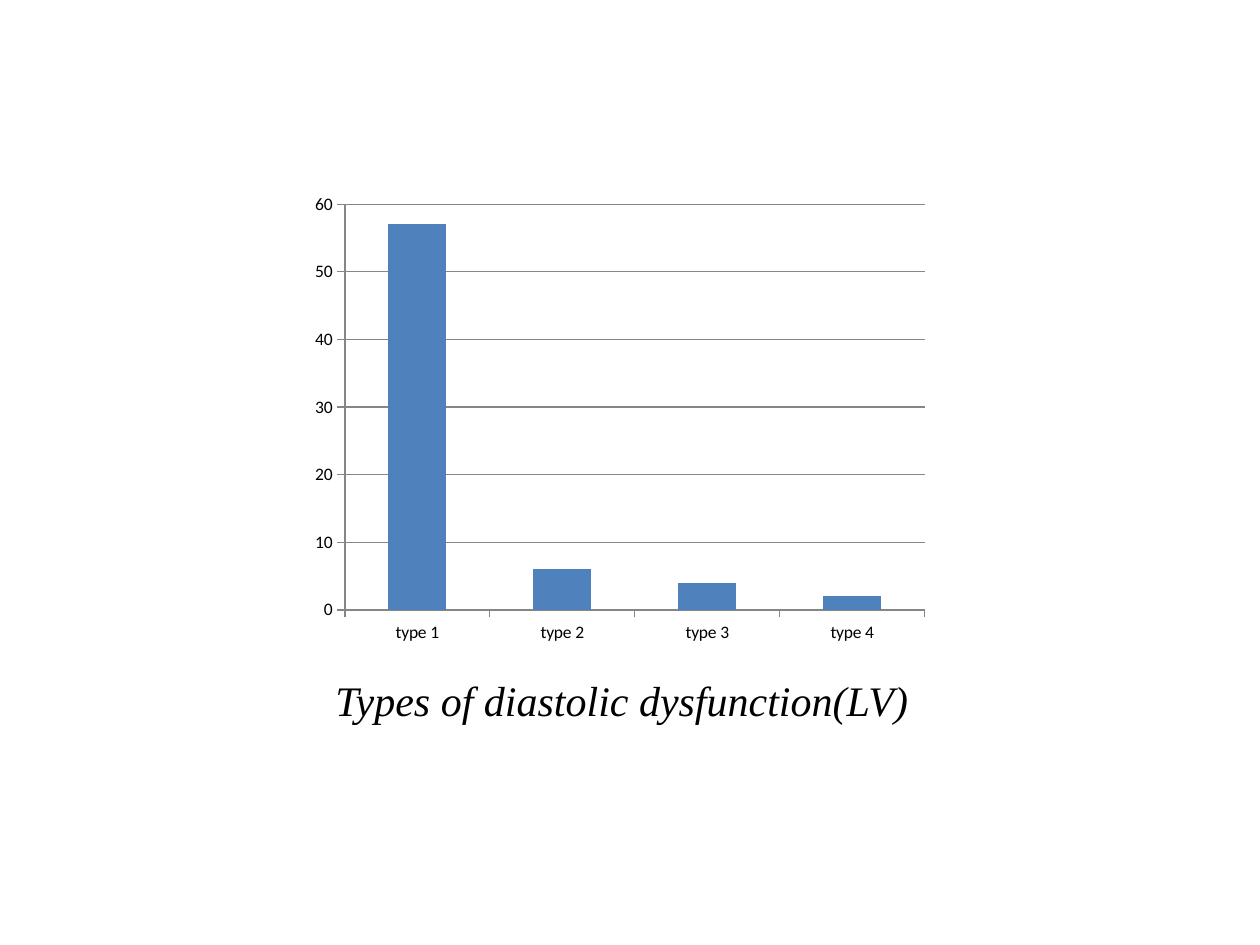
from pptx import Presentation
from pptx.chart.data import CategoryChartData
from pptx.dml.color import RGBColor
from pptx.enum.chart import XL_CHART_TYPE, XL_TICK_MARK
from pptx.enum.text import MSO_ANCHOR, PP_ALIGN
from pptx.util import Pt

COLOURS = {"text": "000000", "bar": "4F81BD", "line": "868686"}
DYSFUNCTION_TYPES = {"type 1": 57, "type 2": 6, "type 3": 4, "type 4": 2}


def colour(name):
    return RGBColor.from_string(COLOURS[name])


def set_format(target, values):
    for name, value in values.items():
        setattr(target, name, value)


def set_line(line):
    line.color.rgb = colour("line")
    line.width = Pt(0.75)


def add_caption(page, text):
    title = page.shapes.title
    set_format(title, {"left": Pt(178.5), "top": Pt(381.6),
                       "width": Pt(395.3), "height": Pt(36)})
    set_format(title.text_frame, {
        "word_wrap": True, "vertical_anchor": MSO_ANCHOR.MIDDLE,
        "margin_left": Pt(13.2), "margin_right": Pt(7.2),
        "margin_top": Pt(3.6), "margin_bottom": Pt(3.6)})
    para = title.text_frame.paragraphs[0]
    para.alignment = PP_ALIGN.LEFT
    span = para.add_run()
    span.text = text
    set_format(span.font, {"name": "Times New Roman", "size": Pt(24),
                           "italic": True, "bold": False})
    span.font.color.rgb = colour("text")


def add_column_chart(page, values):
    chart_data = CategoryChartData(number_format="General")
    chart_data.categories = list(values)
    chart_data.add_series("Series 1", list(values.values()))
    chart = page.shapes.add_chart(
        XL_CHART_TYPE.COLUMN_CLUSTERED,
        Pt(172.8), Pt(105.8), Pt(362.9), Pt(266.4), chart_data).chart
    set_format(chart, {"has_title": False, "has_legend": False})
    set_format(chart.font, {"name": "Calibri", "size": Pt(10)})
    chart.font.color.rgb = colour("text")

    # Columns
    plot = chart.plots[0]
    set_format(plot, {"gap_width": 150, "vary_by_categories": False})
    fill = plot.series[0].format.fill
    fill.solid()
    fill.fore_color.rgb = colour("bar")

    # Axes and gridlines
    for axis in (chart.category_axis, chart.value_axis):
        set_format(axis, {"major_tick_mark": XL_TICK_MARK.OUTSIDE,
                          "minor_tick_mark": XL_TICK_MARK.NONE})
        set_line(axis.format.line)
    set_format(chart.value_axis, {"minimum_scale": 0, "maximum_scale": 60,
                                  "major_unit": 10,
                                  "has_major_gridlines": True})
    set_line(chart.value_axis.major_gridlines.format.line)


def main():
    deck = Presentation()
    set_format(deck, {"slide_width": Pt(720), "slide_height": Pt(540)})
    page = deck.slides.add_slide(deck.slide_layouts[5])
    add_caption(page, "Types of diastolic dysfunction(LV)")
    add_column_chart(page, DYSFUNCTION_TYPES)
    deck.save("out.pptx")


if __name__ == "__main__":
    main()
